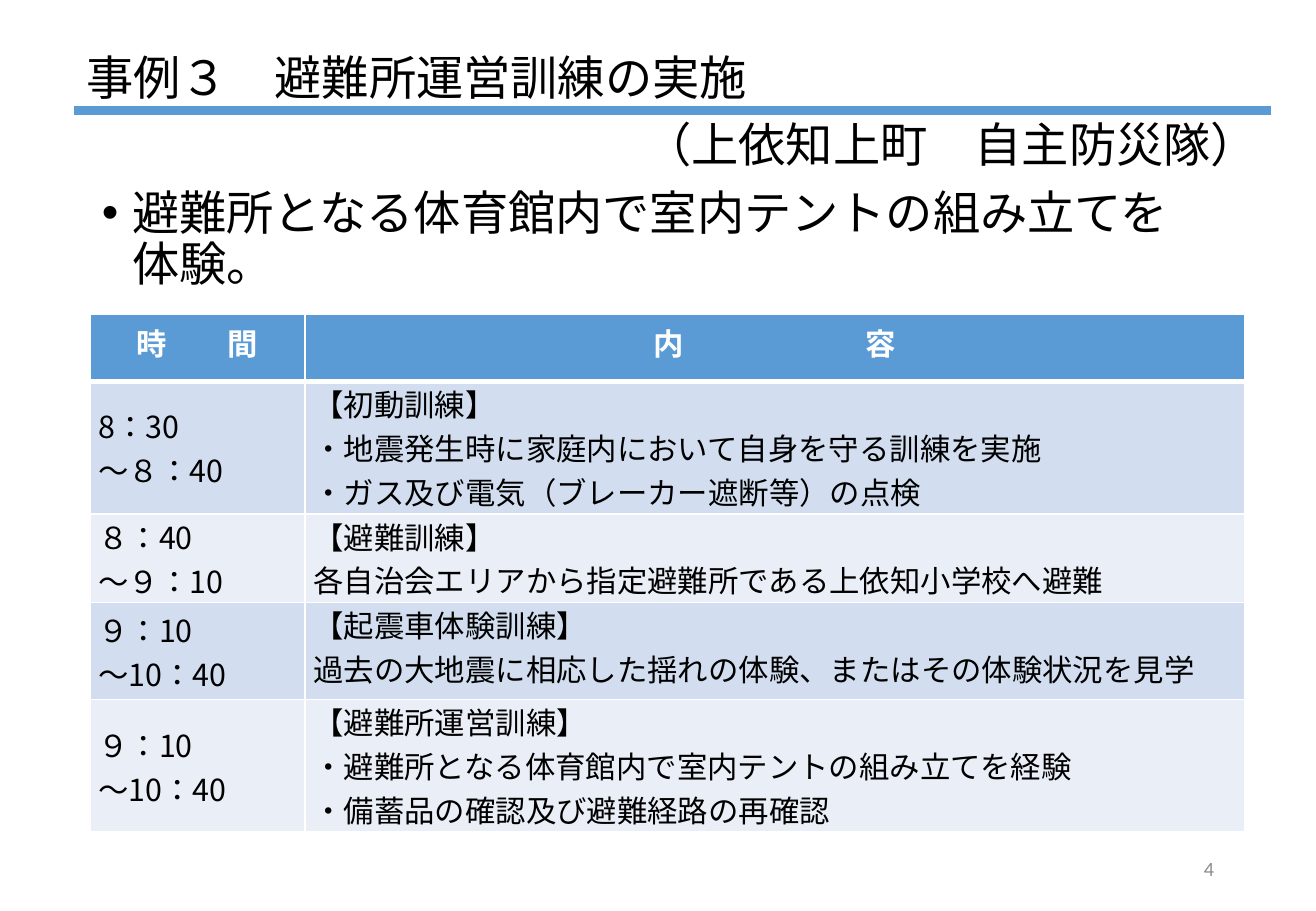
from lxml import etree
from pptx import Presentation
from pptx.dml.color import RGBColor
from pptx.enum import lang, shapes, text
from pptx.oxml import ns
from pptx.util import Inches, Pt

JAPANESE_FONT = "Noto Sans CJK JP"
BLACK = RGBColor(0, 0, 0)
WHITE = RGBColor(255, 255, 255)
GRAY = RGBColor(0x8C, 0x8C, 0x8C)
BLUE = RGBColor(0x5B, 0x9B, 0xD5)
BANDS = [RGBColor(0xD2, 0xDE, 0xEF), RGBColor(0xEA, 0xEF, 0xF7)]

TITLE = "事例３　避難所運営訓練の実施"
GROUP = "（上依知上町　自主防災隊）"
SUMMARY = "避難所となる体育館内で室内テントの組み立てを体験。"
PAGE_NUMBER = "4"
HEADER = ["時　　間", "内　　　　　　容"]
SCHEDULE = [
    (["8：30", "～８：40"],
     ["【初動訓練】", "・地震発生時に家庭内において自身を守る訓練を実施",
      "・ガス及び電気（ブレーカー遮断等）の点検"]),
    (["８：40", "～９：10"],
     ["【避難訓練】", "各自治会エリアから指定避難所である上依知小学校へ避難"]),
    (["９：10", "～10：40"],
     ["【起震車体験訓練】", "過去の大地震に相応した揺れの体験、またはその体験状況を見学"]),
    (["９：10", "～10：40"],
     ["【避難所運営訓練】", "・避難所となる体育館内で室内テントの組み立てを経験",
      "・備蓄品の確認及び避難経路の再確認"]),
]
COLUMN_WIDTHS = [1.77, 7.73]
ROW_HEIGHTS = [0.55, 1.09, 0.73, 0.8, 1.09]

LEFT, CENTER = text.PP_ALIGN.LEFT, text.PP_ALIGN.CENTER
RIGHT, JUSTIFY = text.PP_ALIGN.RIGHT, text.PP_ALIGN.JUSTIFY
TOP, MIDDLE = text.MSO_ANCHOR.TOP, text.MSO_ANCHOR.MIDDLE


def write(frame, lines, size, color, align, bold=False, font=JAPANESE_FONT):
    """Fill a text frame with one paragraph per line and return the first."""
    for index, line in enumerate(lines):
        paragraph = frame.add_paragraph() if index else frame.paragraphs[0]
        paragraph.alignment = align
        run = paragraph.add_run()
        run.text = line
        run.font.size = Pt(size)
        run.font.bold = bold
        run.font.name = font
        run.font.color.rgb = color
        run.font.language_id = lang.MSO_LANGUAGE_ID.JAPANESE
        latin = run.font._element.find(ns.qn("a:latin"))
        east_asian = etree.Element(ns.qn("a:ea"), typeface=font)
        latin.addnext(east_asian)
    return frame.paragraphs[0]


def add_text(slide, box, line, align=LEFT, anchor=MIDDLE, size=28, color=BLACK,
             font=JAPANESE_FONT):
    frame = slide.shapes.add_textbox(*map(Inches, box)).text_frame
    frame.word_wrap = True
    frame.vertical_anchor = anchor
    return write(frame, [line], size, color, align, font=font)


def add_bullet(paragraph):
    properties = paragraph._p.get_or_add_pPr()
    properties.set("marL", str(Inches(0.25)))
    properties.set("indent", str(-Inches(0.25)))
    etree.SubElement(properties, ns.qn("a:buFont"), typeface="Arial")
    etree.SubElement(properties, ns.qn("a:buChar"), char="•")


def set_borders(cell, top=1, bottom=1):
    """Draw white cell borders with widths in points."""
    properties = cell._tc.get_or_add_tcPr()
    sides = {"lnL": 1, "lnR": 1, "lnT": top, "lnB": bottom}
    for position, (side, width) in enumerate(sides.items()):
        line = etree.Element(ns.qn("a:" + side), w=str(Pt(width)))
        fill = etree.SubElement(line, ns.qn("a:solidFill"))
        etree.SubElement(fill, ns.qn("a:srgbClr"), val=str(WHITE))
        properties.insert(position, line)


def fill_cell(cell, color):
    cell.fill.solid()
    cell.fill.fore_color.rgb = color


def add_schedule(slide):
    rows = len(SCHEDULE) + 1
    table = slide.shapes.add_table(
        rows, len(HEADER), Inches(0.74), Inches(2.59),
        Inches(sum(COLUMN_WIDTHS)), Inches(sum(ROW_HEIGHTS))).table
    for column, width in zip(table.columns, COLUMN_WIDTHS):
        column.width = Inches(width)
    for row, height in zip(table.rows, ROW_HEIGHTS):
        row.height = Inches(height)

    for column, label in enumerate(HEADER):
        cell = table.cell(0, column)
        fill_cell(cell, BLUE)
        set_borders(cell, bottom=3)
        write(cell.text_frame, [label], 18, WHITE, CENTER, bold=True)

    for row, entry in enumerate(SCHEDULE, start=1):
        for column, lines in enumerate(entry):
            cell = table.cell(row, column)
            fill_cell(cell, BANDS[(row - 1) % 2])
            set_borders(cell, top=3 if row == 1 else 1)
            cell.margin_left = cell.margin_right = Inches(0.07)
            cell.margin_top = cell.margin_bottom = 0
            cell.vertical_anchor = TOP if column else MIDDLE
            write(cell.text_frame, lines, 18, BLACK, JUSTIFY)


def add_title_rule(slide):
    y = Inches(0.91)
    rule = slide.shapes.add_connector(
        shapes.MSO_CONNECTOR.STRAIGHT, Inches(0.61), y, Inches(10.46), y)
    rule.line.color.rgb = BLUE
    rule.line.width = Pt(5.75)
    etree.SubElement(rule._element.spPr, ns.qn("a:effectLst"))


def main():
    presentation = Presentation()
    presentation.slide_width = Inches(10.83)
    presentation.slide_height = Inches(7.5)
    slide = presentation.slides.add_slide(presentation.slide_layouts[6])

    title = add_text(slide, (0.61, 0.38, 9.34, 0.56), TITLE)
    summary = add_text(slide, (0.74, 1.51, 9.34, 1.05), SUMMARY, anchor=TOP)
    group = add_text(slide, (1.11, 0.93, 9.34, 0.56), GROUP, align=RIGHT)
    for paragraph in (title, summary, group):
        paragraph.line_spacing = 0.9
    summary.space_before = Pt(10)
    add_bullet(summary)

    add_schedule(slide)
    add_title_rule(slide)
    add_text(slide, (7.65, 6.95, 2.44, 0.4), PAGE_NUMBER, align=RIGHT,
             size=12, color=GRAY, font="Calibri")
    presentation.save("out.pptx")


if __name__ == "__main__":
    main()
